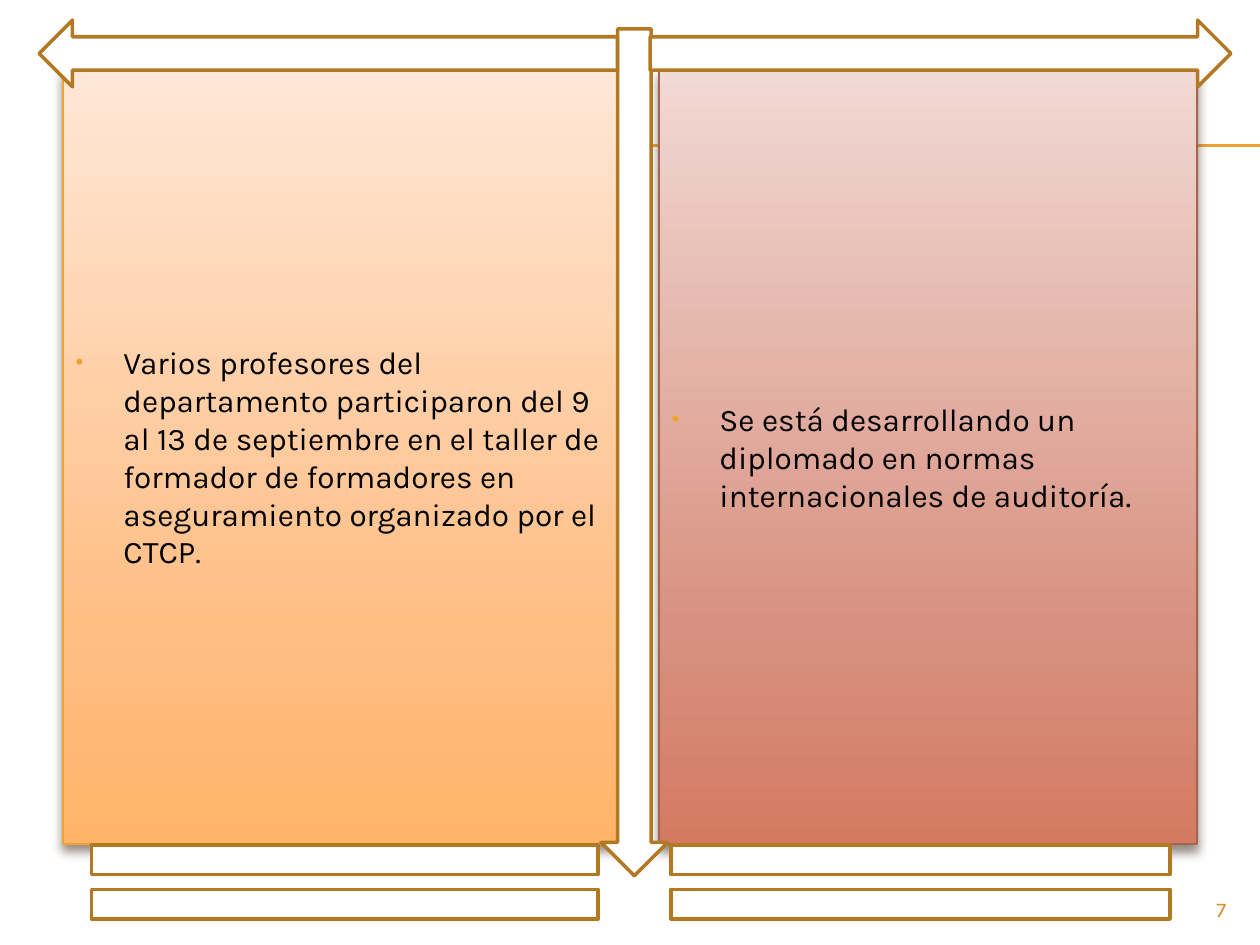
from copy import deepcopy
from dataclasses import dataclass

from lxml import etree
from pptx import Presentation
from pptx.dml.color import RGBColor
from pptx.enum.shapes import MSO_CONNECTOR, MSO_SHAPE
from pptx.enum.text import MSO_ANCHOR, MSO_AUTO_SIZE, PP_ALIGN
from pptx.oxml.ns import qn
from pptx.util import Inches, Pt

STRAIGHT = MSO_CONNECTOR.STRAIGHT
DOWN_ARROW, LEFT_ARROW, RIGHT_ARROW, EQUAL = (
    MSO_SHAPE.DOWN_ARROW, MSO_SHAPE.LEFT_ARROW, MSO_SHAPE.RIGHT_ARROW, MSO_SHAPE.MATH_EQUAL)
MIDDLE, NO_AUTOFIT, RIGHT = MSO_ANCHOR.MIDDLE, MSO_AUTO_SIZE.NONE, PP_ALIGN.RIGHT


@dataclass(frozen=True)
class Theme:
    font: str = "Karla"
    body_size: float = 18
    number_size: float = 12
    text: str = "000000"
    accent: str = "F0A22E"
    number: str = "D48F29"
    frame_fill: str = "FFFFFF"
    frame_line: str = "B27822"
    shadow: str = "4E3B30"
    frame_width: float = 2
    panel_width: float = 0.79
    rule_width: float = 0.75


@dataclass(frozen=True)
class Box:
    left: float
    top: float
    width: float
    height: float

    def lengths(self) -> tuple:
        return tuple(Inches(v) for v in (self.left, self.top, self.width, self.height))


@dataclass(frozen=True)
class Panel:
    placeholder: int
    box: Box
    gradient: tuple
    line: str
    text: str


@dataclass(frozen=True)
class Frame:
    kind: int
    box: Box


THEME = Theme()
PANELS = (
    Panel(1, Box(0.5, 0.55, 4.42, 6.15), ("FFE7D7", "FFBE84", "FFB468"), "F0A22E",
          "Varios profesores del departamento participaron del 9 al 13 de septiembre en el "
          "taller de formador de formadores en aseguramiento organizado por el CTCP."),
    Panel(2, Box(5.23, 0.55, 4.27, 6.15), ("F1D9D4", "D89180", "D47A62"), "A5644E",
          "Se está desarrollando un diplomado en normas internacionales de auditoría."),
)
GRADIENT_POSITIONS = (0, 0.72, 1)
FRAMES = (
    Frame(DOWN_ARROW, Box(4.77, 0.23, 0.53, 6.72)),
    Frame(RIGHT_ARROW, Box(5.16, 0.16, 4.61, 0.53)),
    Frame(LEFT_ARROW, Box(0.31, 0.16, 4.59, 0.53)),
    Frame(EQUAL, Box(0, 6.5, 5.47, 1)),
    Frame(EQUAL, Box(4.61, 6.5, 5.39, 1)),
)
RULE_HEIGHTS = (1.15, 1.16)


def color(value: str) -> RGBColor:
    return RGBColor.from_string(value)


def apply(target, values: dict) -> None:
    for name, value in values.items():
        setattr(target, name, value)


def add_node(parent, tag: str, **attributes: str):
    return etree.SubElement(parent, qn(tag), attributes)


def set_line(line, value: str, width: float) -> None:
    line.color.rgb = color(value)
    line.width = Pt(width)


def set_font(paragraph, size: float, value: str) -> None:
    apply(paragraph.runs[0].font, {"name": THEME.font, "size": Pt(size)})
    paragraph.runs[0].font.color.rgb = color(value)


def set_gradient(shape, colors: tuple) -> None:
    shape.fill.gradient()
    shape.fill.gradient_angle = 270
    first_stop = shape._element.spPr.find(".//" + qn("a:gs"))
    first_stop.addnext(deepcopy(first_stop))
    for stop, position, value in zip(shape.fill.gradient_stops, GRADIENT_POSITIONS, colors):
        stop.position = position
        stop.color.rgb = color(value)


def set_shadow(shape) -> None:
    effects = add_node(shape._element.spPr, "a:effectLst")
    shadow = add_node(effects, "a:outerShdw", blurRad=str(Pt(6)), dist=str(Pt(4)),
                      dir="5400000", rotWithShape="0")
    add_node(add_node(shadow, "a:srgbClr", val=THEME.shadow), "a:alpha", val="60000")


def set_bullet(paragraph) -> None:
    properties = paragraph._p.get_or_add_pPr()
    indent = Inches(0.38)
    properties.set("marL", str(indent))
    properties.set("indent", str(-indent))
    add_node(add_node(properties, "a:spcBef"), "a:spcPct", val="20000")
    add_node(add_node(properties, "a:buClr"), "a:srgbClr", val=THEME.accent)
    add_node(properties, "a:buSzPct", val="70000")
    add_node(properties, "a:buChar", char="•")


def fill_panel(slide, panel: Panel) -> None:
    shape = slide.placeholders[panel.placeholder]
    apply(shape, dict(zip(("left", "top", "width", "height"), panel.box.lengths())))
    set_gradient(shape, panel.gradient)
    set_line(shape.line, panel.line, THEME.panel_width)
    set_shadow(shape)
    frame = shape.text_frame
    frame.text = panel.text
    apply(frame, {"vertical_anchor": MIDDLE, "auto_size": NO_AUTOFIT, "word_wrap": True})
    set_bullet(frame.paragraphs[0])
    set_font(frame.paragraphs[0], THEME.body_size, THEME.text)


def add_rule(slide, height: float) -> None:
    y = Inches(height)
    rule = slide.shapes.add_connector(STRAIGHT, Inches(0.56), y, Inches(10), y)
    set_line(rule.line, THEME.accent, THEME.rule_width)
    add_node(rule._element.spPr, "a:effectLst")
    # Rules lie behind the panels
    slide.placeholders[PANELS[0].placeholder]._element.addprevious(rule._element)


def add_frame(slide, frame: Frame) -> None:
    shape = slide.shapes.add_shape(frame.kind, *frame.box.lengths())
    shape.shadow.inherit = False
    shape.fill.solid()
    shape.fill.fore_color.rgb = color(THEME.frame_fill)
    set_line(shape.line, THEME.frame_line, THEME.frame_width)


def add_slide_number(slide, number: str, box: Box) -> None:
    frame = slide.shapes.add_textbox(*box.lengths()).text_frame
    frame.text = number
    apply(frame, {"word_wrap": True, "vertical_anchor": MIDDLE})
    frame.paragraphs[0].alignment = RIGHT
    set_font(frame.paragraphs[0], THEME.number_size, THEME.number)


def main() -> None:
    presentation = Presentation()
    apply(presentation, {"slide_width": Inches(10), "slide_height": Inches(7.5)})
    slide = presentation.slides.add_slide(presentation.slide_layouts[3])

    # The slide has no title
    title = slide.shapes.title._element
    title.getparent().remove(title)

    # Background rules and text panels
    for height in RULE_HEIGHTS:
        add_rule(slide, height)
    for panel in PANELS:
        fill_panel(slide, panel)

    # Arrows, equal signs and slide number
    for frame in FRAMES:
        add_frame(slide, frame)
    add_slide_number(slide, "7", Box(9, 7.08, 0.83, 0.27))

    presentation.save("out.pptx")


if __name__ == "__main__":
    main()
